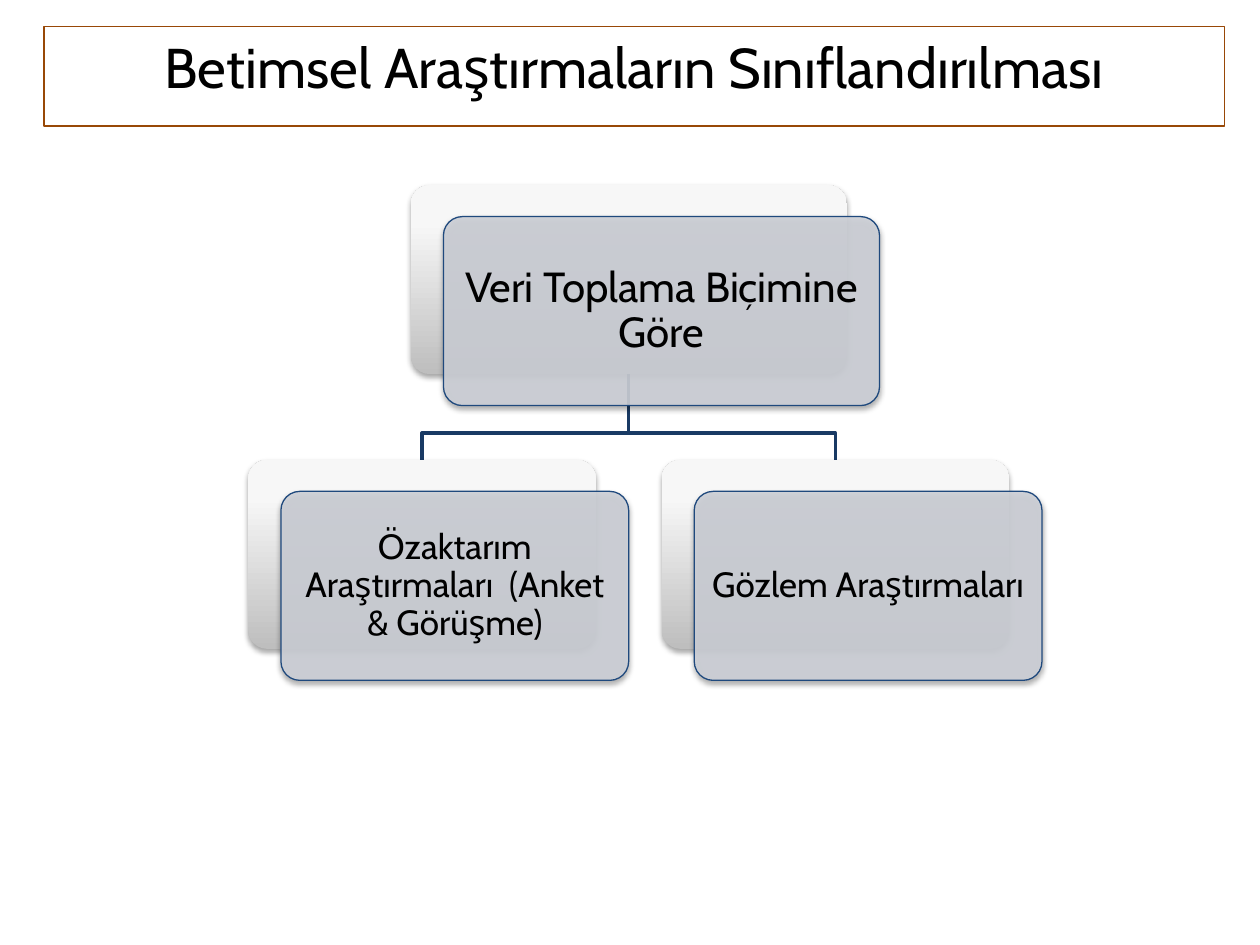
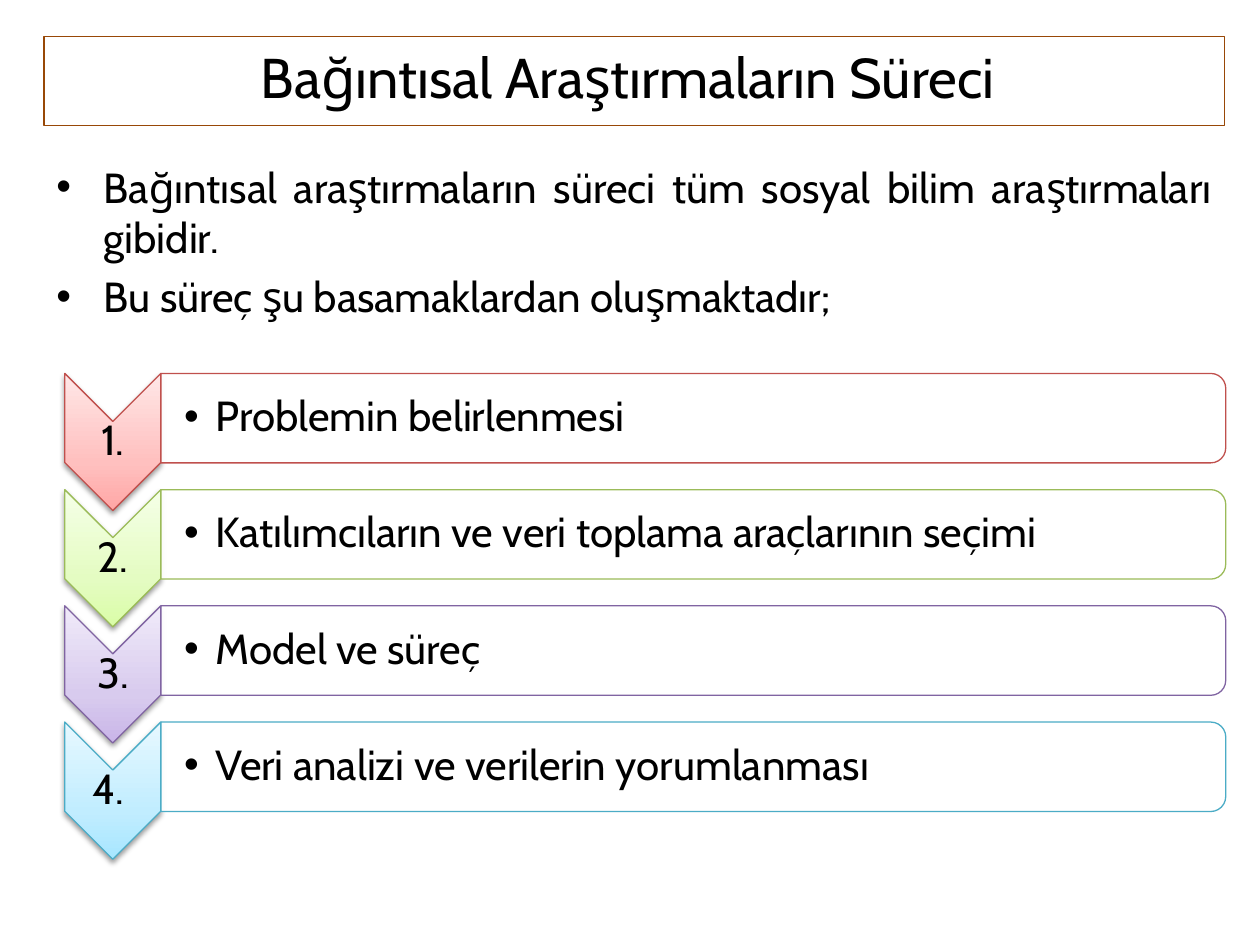
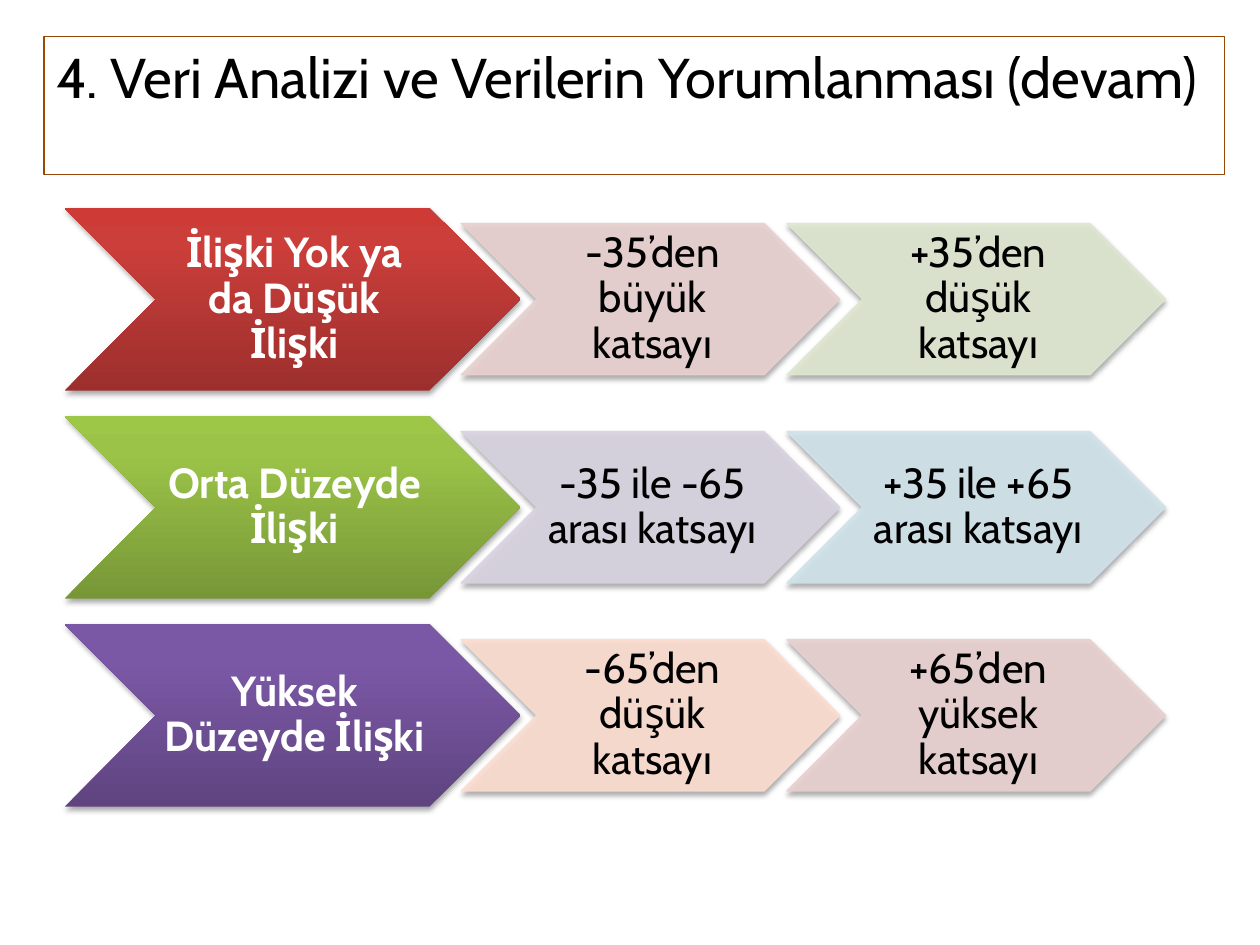
from lxml.etree import SubElement
from pptx import Presentation
from pptx.dml.color import RGBColor
from pptx.enum.shapes import MSO_SHAPE
from pptx.enum.text import MSO_ANCHOR, PP_ALIGN
from pptx.oxml import parse_xml
from pptx.oxml.ns import nsdecls, qn
from pptx.util import Pt

FONT = "Cabin"
BLACK = "000000"
WHITE = "FFFFFF"
FRAME = "984807"
NAVY = "193A64"
BLUE = "1F497D"
MIST = "CDD0D7"
GREYS = ("BEBEBE", "F7F7F7", "F8F8F8")
LEFT, WIDTH = 25.2, 674.6

STEPS = [
    ("1.", "Problemin belirlenmesi", "C0504D",
     ("FFA6A5", "FFC0BF", "FFE7E7")),
    ("2.", "Katılımcıların ve veri toplama araçlarının seçimi", "9BBB59",
     ("DAFDA7", "E4FCC2", "F5FFE7")),
    ("3.", "Model ve süreç", "8064A2",
     ("C9B5E8", "D8CBEE", "F0EAF9")),
    ("4. ", "Veri analizi ve verilerin yorumlanması", "4BACC6",
     ("A7E6FF", "C1EDFF", "E7F8FF")),
]

LEVELS = [
    ("İlişki Yok ya da Düşük İlişki", ("9C2F2D", "CB3E3A", "CE3B37"),
     [("-35’den büyük katsayı", "E8D0D0"), ("+35’den düşük katsayı", "DEE7D1")]),
    ("Orta Düzeyde İlişki", ("779737", "9BC348", "9DC746"),
     [("-35 ile -65 arası katsayı", "D8D3E0"), ("+35 ile +65 arası katsayı", "D0E3EA")]),
    ("Yüksek Düzeyde İlişki", ("5F4480", "7B58A6", "7C57A8"),
     [("-65’den düşük katsayı", "FCDDCF"), ("+65’den yüksek katsayı", "E8D0D0")]),
]


def hue(code):
    return RGBColor.from_string(code)


def tint(fill, code, alpha=100):
    fill.solid()
    fill.fore_color.rgb = hue(code)
    if alpha < 100:
        tone = fill._xPr.find(qn("a:solidFill"))[0]
        SubElement(tone, qn("a:alpha"), val=str(alpha * 1000))


def fade(shape, tones, mid):
    shape.fill.background()
    stops = "".join(
        f'<a:gs pos="{at * 1000}"><a:srgbClr val="{tone}"/></a:gs>'
        for at, tone in zip((0, mid, 100), tones))
    grad = parse_xml(
        f'<a:gradFill {nsdecls("a")} rotWithShape="0"><a:gsLst>{stops}</a:gsLst>'
        '<a:lin ang="16200000" scaled="0"/></a:gradFill>')
    props = shape._element.spPr
    props.replace(props.find(qn("a:noFill")), grad)


def shade(shape, alpha=35, dist=1.8):
    effects = shape._element.spPr.find(qn("a:effectLst"))
    effects.append(parse_xml(
        f'<a:outerShdw {nsdecls("a")} blurRad="{Pt(3.1)}" dist="{Pt(dist)}" '
        'dir="5400000" rotWithShape="0"><a:srgbClr val="000000">'
        f'<a:alpha val="{alpha * 1000}"/></a:srgbClr></a:outerShdw>'))


def block(slide, kind, x, y, w, h, turn=False):
    if turn:
        x, y, w, h = x + (w - h) / 2, y + (h - w) / 2, h, w
    shape = slide.shapes.add_shape(kind, Pt(x), Pt(y), Pt(w), Pt(h))
    shape.rotation = 90 if turn else 0
    shape.shadow.inherit = False
    shape.line.fill.background()
    return shape


def edge(shape, code, width=0.75, alpha=100):
    shape.line.width = Pt(width)
    tint(shape.line.fill, code, alpha)


def label(slide, x, y, w, h, *lines, size=24, pad=(1.4, 1.4, 1.4, 1.4),
          align=PP_ALIGN.CENTER, anchor=MSO_ANCHOR.MIDDLE, lead=0.9,
          hang=0, tone=BLACK, bold=False):
    box = slide.shapes.add_textbox(Pt(x), Pt(y), Pt(w), Pt(h))
    frame = box.text_frame
    frame.word_wrap = True
    frame.vertical_anchor = anchor
    (frame.margin_left, frame.margin_top,
     frame.margin_right, frame.margin_bottom) = map(Pt, pad)
    for i, line in enumerate(lines):
        para = frame.add_paragraph() if i else frame.paragraphs[0]
        para.text = line
        if hang:
            props = para._p.get_or_add_pPr()
            props.set("marL", str(Pt(hang)))
            props.set("indent", str(Pt(-hang)))
            SubElement(props, qn("a:buFont"), typeface="Arial")
            SubElement(props, qn("a:buChar"), char="•")
        para.alignment = align
        para.line_spacing = lead
        if i:
            para.space_before = Pt(size * 0.2)
        font = para.font
        font.name, font.size, font.bold = FONT, Pt(size), bold
        font.color.rgb = hue(tone)
    return box


def prose(slide, y, h, *lines, **style):
    return label(slide, LEFT, y, WIDTH, h, *lines, pad=(7.2, 3.6, 7.2, 3.6),
                 anchor=MSO_ANCHOR.TOP, lead=1.0, **style)


def title(slide, y, h, text, align=PP_ALIGN.CENTER):
    edge(prose(slide, y, h, text, size=32, align=align), FRAME)


def elbow(slide, start, end, bend):
    (x, y), (far, low) = start, end
    pen = slide.shapes.build_freeform(Pt(x), Pt(y))
    pen.add_line_segments(
        [(Pt(x), Pt(bend)), (Pt(far), Pt(bend)), (Pt(far), Pt(low))], close=False)
    shape = pen.convert_to_shape()
    shape.shadow.inherit = False
    shape.fill.background()
    edge(shape, NAVY, 2)


def node(slide, mid, y, w, text, size, inset):
    x, h, gap = mid - w / 2, 108, 3.2
    back = block(slide, MSO_SHAPE.ROUNDED_RECTANGLE, x, y, w, h)
    fade(back, GREYS, 80)
    x, y = x + 18.7, y + 18
    front = block(slide, MSO_SHAPE.ROUNDED_RECTANGLE, x, y, w, h)
    tint(front.fill, MIST, 90)
    edge(front, BLUE)
    for card in (back, front):
        card.adjustments[0] = 0.1
        shade(card)
    label(slide, x + gap, y + gap, w - 2 * gap, h - 2 * gap, text,
          size=size, pad=(inset,) * 4)


def step(slide, y, mark, text, line, tones):
    arrow = block(slide, MSO_SHAPE.CHEVRON, 37, y, 54.9, 78.4, turn=True)
    fade(arrow, tones, 35)
    edge(arrow, line)
    shade(arrow, 38, 1.6)
    label(slide, 37, y + 27.5, 54.9, 23.8, mark)
    panel = block(slide, MSO_SHAPE.ROUND_2_SAME_RECTANGLE, 92, y, 608.4, 51.1, turn=True)
    tint(panel.fill, WHITE, 90)
    edge(panel, line)
    label(slide, 91.5, y + 2.5, 606, 46.1, text, pad=(13.7, 1.4, 1.4, 1.4),
          align=PP_ALIGN.LEFT, hang=18)


def arrow(slide, x, y, w, h, text, **style):
    shape = block(slide, MSO_SHAPE.CHEVRON, x, y, w, h)
    shade(shape)
    label(slide, x + h / 2, y, w - h, h, text, pad=(2.2, 1.4, 0, 1.4), **style)
    return shape


def classes(slide):
    mid, top, low, reach = 359.3, 105.8, 262.8, 118.1
    kids = [(mid - reach, "Özaktarım Araştırmaları  (Anket & Görüşme)"),
            (mid + reach, "Gözlem Araştırmaları")]
    for spot, _ in reversed(kids):
        elbow(slide, (mid, top + 108), (spot, low), 247.5)
    node(slide, mid, top, 249.2, "Veri Toplama Biçimine Göre", 24, 7.2)
    for spot, text in kids:
        node(slide, spot, low, 198.7, text, 20, 5.6)
    title(slide, 15, 57, "Betimsel Araştırmaların Sınıflandırılması")


def process(slide):
    for i, (mark, text, line, tones) in enumerate(STEPS):
        step(slide, 213.4 + 66.4 * i, mark, text, line, tones)
    title(slide, 20.8, 51, "Bağıntısal Araştırmaların Süreci ")
    prose(slide, 88.6, 118.8,
          "Bağıntısal araştırmaların süreci tüm sosyal bilim araştırmaları gibidir.",
          "Bu süreç şu basamaklardan oluşmaktadır;",
          align=PP_ALIGN.JUSTIFY, hang=27)


def ranges(slide):
    title(slide, 20.8, 79, "4. Veri Analizi ve Verilerin Yorumlanması (devam)",
          PP_ALIGN.JUSTIFY)
    for i, (name, tones, cells) in enumerate(LEVELS):
        y = 118.9 * (i + 1)
        head = arrow(slide, 36.9, y, 260.6, 104.3, name, tone=WHITE, bold=True)
        fade(head, tones, 80)
        for j, (text, code) in enumerate(cells):
            cell = arrow(slide, 263.5 + 186.2 * j, y + 8.8, 216.4, 86.5, text)
            tint(cell.fill, code, 90)
            edge(cell, code, alpha=90)


def main():
    deck = Presentation()
    deck.slide_width, deck.slide_height = Pt(720), Pt(540)
    for draw in (classes, process, ranges):
        draw(deck.slides.add_slide(deck.slide_layouts[6]))
    deck.save("out.pptx")


if __name__ == "__main__":
    main()
